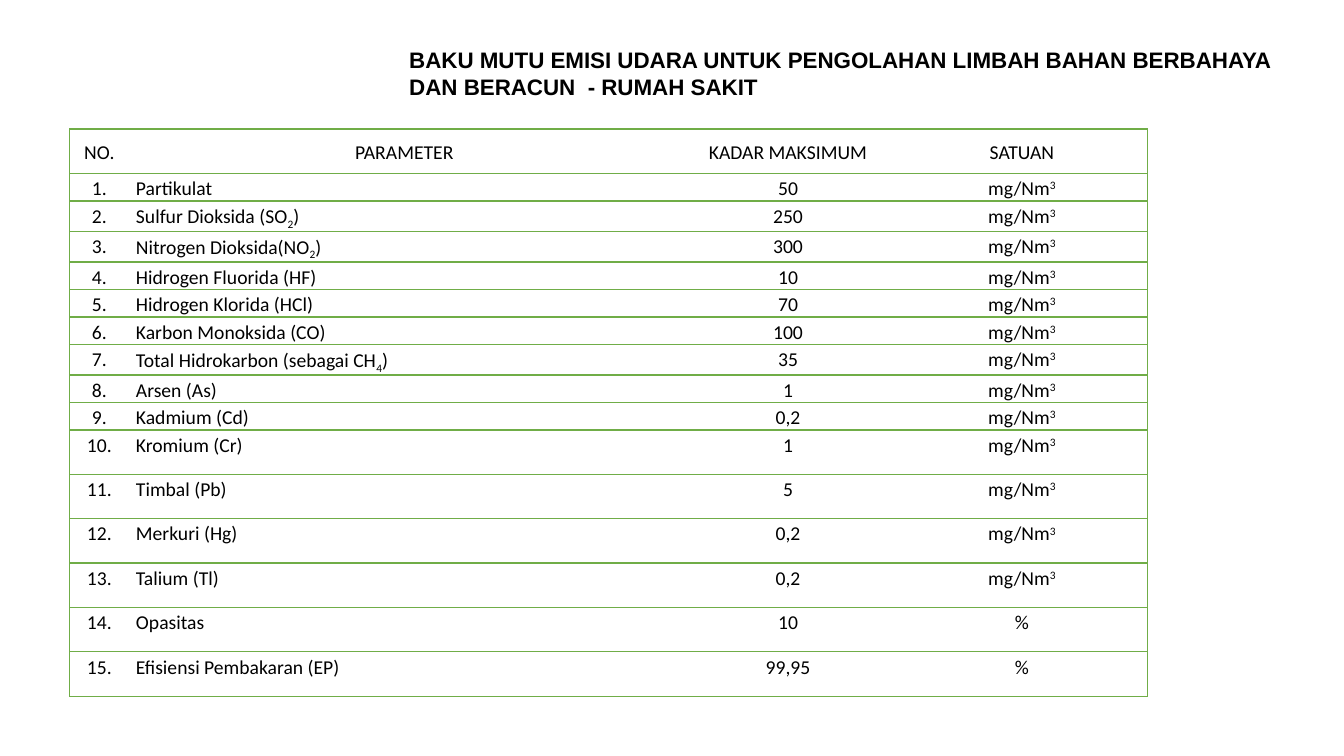
from dataclasses import dataclass

from lxml import etree
from pptx import Presentation
from pptx import util as u
from pptx.dml.color import RGBColor
from pptx.enum import text
from pptx.oxml import ns

WIDTH, HEIGHT = u.Inches(13.33), u.Inches(7.5)


@dataclass(frozen=True)
class Theme:
    """Colours, fonts and type sizes of the slide."""

    ink: str = "000000"
    paper: str = "FFFFFF"
    rule: str = "70AD47"
    title_font: str = "Arial"
    table_font: str = "Calibri"
    title_size: int = 16
    table_size: int = 14
    rule_width: int = 1
    line_spacing: float = 1.15


THEME = Theme()
TITLE = (
    "BAKU MUTU EMISI UDARA UNTUK PENGOLAHAN LIMBAH BAHAN BERBAHAYA "
    "DAN BERACUN  - RUMAH SAKIT"
)
HEADINGS = ("NO.", "PARAMETER", "KADAR MAKSIMUM", "SATUAN")
CONCENTRATION = "mg/Nm|^3"
LIMITS = (
    ("Partikulat", "50", CONCENTRATION),
    ("Sulfur Dioksida (SO|_2|)", "250", CONCENTRATION),
    ("Nitrogen Dioksida(NO|_2|)", "300", CONCENTRATION),
    ("Hidrogen Fluorida (HF)", "10", CONCENTRATION),
    ("Hidrogen Klorida (HCl)", "70", CONCENTRATION),
    ("Karbon Monoksida (CO)", "100", CONCENTRATION),
    ("Total Hidrokarbon (sebagai CH|_4|)", "35", CONCENTRATION),
    ("Arsen (As)", "1", CONCENTRATION),
    ("Kadmium (Cd)", "0,2", CONCENTRATION),
    ("Kromium (Cr)", "1", CONCENTRATION),
    ("Timbal (Pb)", "5", CONCENTRATION),
    ("Merkuri (Hg)", "0,2", CONCENTRATION),
    ("Talium (Tl)", "0,2", CONCENTRATION),
    ("Opasitas", "10", "%"),
    ("Efisiensi Pembakaran (EP)", "99,95", "%"),
)
COLUMN_SHARES = (4.43, 40.96, 16.13, 18.68)
TALL_ROW, SHORT_ROW = 5.87, 3.64
ROW_SHARES = (TALL_ROW,) + (SHORT_ROW,) * 9 + (TALL_ROW,) * 6
BASELINES = {"^": "30000", "_": "-25000"}


def across(percent):
    """Return a share of the slide's width."""
    return u.Emu(round(WIDTH * percent / 100))


def down(percent):
    """Return a share of the slide's height."""
    return u.Emu(round(HEIGHT * percent / 100))


def style_font(font, name, size, bold=False):
    """Apply the typeface, size and ink colour."""
    font.name, font.size, font.bold = name, u.Pt(size), bold
    font.color.rgb = RGBColor.from_string(THEME.ink)


def add_title(slide):
    """Add the bold heading above the table."""
    box = slide.shapes.add_textbox(across(29.71), down(5.47), across(66.77), down(8.53))
    box.text_frame.word_wrap = True
    paragraph = box.text_frame.paragraphs[0]
    paragraph.text = TITLE
    style_font(paragraph.font, THEME.title_font, THEME.title_size, bold=True)


def write_formula(paragraph, content):
    """Write runs split at bars, raising ^ pieces and lowering _ pieces."""
    for piece in content.split("|"):
        run = paragraph.add_run()
        run.text = piece.lstrip("^_")
        if piece[0] in BASELINES:
            run._r.get_or_add_rPr().set("baseline", BASELINES[piece[0]])


def rule_cell(cell, ruled_sides):
    """Draw the given sides of a cell and clear the others."""
    properties = cell._tc.get_or_add_tcPr()
    for side in "LRTB":
        line = etree.SubElement(properties, ns.qn(f"a:ln{side}"), w=str(u.Pt(THEME.rule_width)))
        if side in ruled_sides:
            fill = etree.SubElement(line, ns.qn("a:solidFill"))
            etree.SubElement(fill, ns.qn("a:srgbClr"), val=THEME.rule)
        else:
            etree.SubElement(line, ns.qn("a:noFill"))


def fill_cell(cell, content, ruled_sides, centred, heading):
    """Format one table cell and write its content."""
    rule_cell(cell, ruled_sides)
    cell.fill.solid()
    cell.fill.fore_color.rgb = RGBColor.from_string(THEME.paper)
    cell.margin_left = cell.margin_right = across(0.51)
    cell.margin_top = cell.margin_bottom = 0
    cell.vertical_anchor = text.MSO_ANCHOR.MIDDLE if heading else text.MSO_ANCHOR.TOP
    paragraph = cell.text_frame.paragraphs[0]
    paragraph.alignment = text.PP_ALIGN.CENTER if centred else text.PP_ALIGN.LEFT
    paragraph.line_spacing = THEME.line_spacing
    style_font(paragraph.font, THEME.table_font, THEME.table_size)
    write_formula(paragraph, content)


def add_limits_table(slide):
    """Add the table of emission limits."""
    records = [HEADINGS] + [(f"{number}.", *limit) for number, limit in enumerate(LIMITS, 1)]
    table = slide.shapes.add_table(
        len(records), len(HEADINGS), across(5.18), down(17.07),
        across(sum(COLUMN_SHARES)), down(sum(ROW_SHARES)),
    ).table
    table.first_row = table.horz_banding = False
    for column, share in zip(table.columns, COLUMN_SHARES):
        column.width = across(share)
    outer_sides = {0: "L", len(HEADINGS) - 1: "R"}
    for row_index, (record, share) in enumerate(zip(records, ROW_SHARES)):
        table.rows[row_index].height = down(share)
        heading = row_index == 0
        for column_index, content in enumerate(record):
            fill_cell(
                table.cell(row_index, column_index), content,
                "TB" + outer_sides.get(column_index, ""),
                centred=heading or column_index != 1, heading=heading,
            )


def main():
    """Build and save the slide."""
    presentation = Presentation()
    presentation.slide_width, presentation.slide_height = WIDTH, HEIGHT
    slide = presentation.slides.add_slide(presentation.slide_layouts[6])
    add_limits_table(slide)
    add_title(slide)
    presentation.save("out.pptx")


if __name__ == "__main__":
    main()
